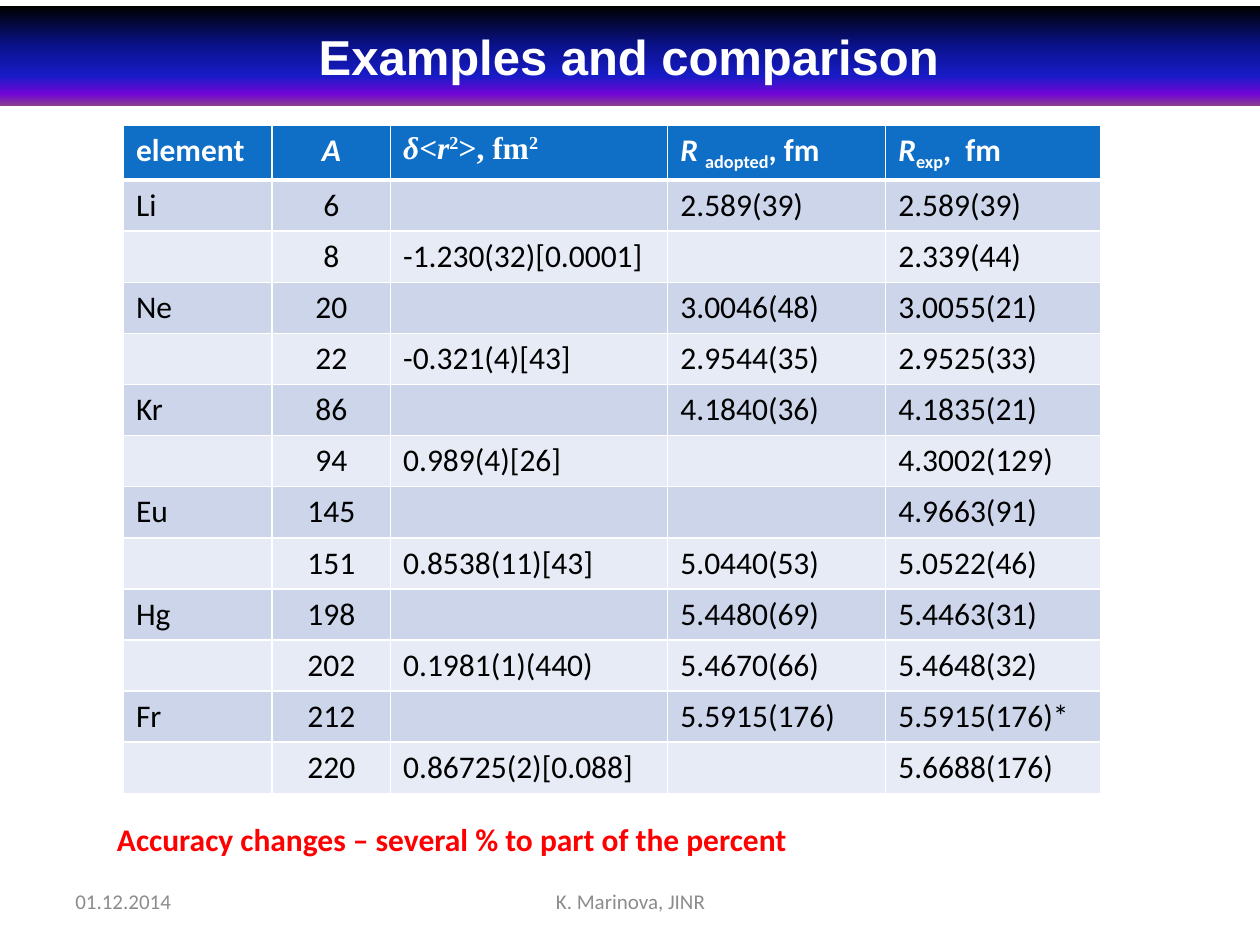
from dataclasses import dataclass

from lxml.etree import SubElement
from pptx import Presentation
from pptx.dml.color import RGBColor
from pptx.enum.text import MSO_ANCHOR as Anchor, PP_ALIGN as Align
from pptx.oxml.ns import qn
from pptx.util import Inches, Pt

WHITE = RGBColor(0xFF, 0xFF, 0xFF)
BLACK = RGBColor(0x00, 0x00, 0x00)
GREY = RGBColor(0x8C, 0x8C, 0x8C)
RED = RGBColor(0xFF, 0x00, 0x00)
HEADER_BLUE = RGBColor(0x0F, 0x6F, 0xC6)
BANDS = (RGBColor(0xCC, 0xD5, 0xEA), RGBColor(0xE7, 0xEB, 0xF5))
# Title gradient: percent and colour
TITLE_STOPS = (
    (0, BLACK),
    (40, RGBColor(0x0A, 0x12, 0x8C)),
    (70, RGBColor(0x18, 0x1C, 0xC7)),
    (88, RGBColor(0x70, 0x05, 0xD4)),
    (100, RGBColor(0x8C, 0x3D, 0x91)),
)
SERIF = "Times New Roman"


@dataclass
class Piece:
    text: str
    size: float = 18
    color: RGBColor = BLACK
    bold: bool = False
    italic: bool = False
    font: str = "Calibri"
    baseline: int = 0  # percent; negative for subscript


@dataclass
class Note:
    piece: Piece
    left: float
    top: float
    width: float
    align: Align = Align.LEFT
    wrap: bool = True


def head(text: str, **style) -> Piece:
    return Piece(text, color=WHITE, bold=True, **style)


HEADINGS = (
    (head("element"),),
    (head("A", italic=True),),
    (head("δ", italic=True, font=SERIF), head("<", font=SERIF),
     head("r", italic=True, font=SERIF), head("2", font=SERIF, baseline=30),
     head(">, fm", font=SERIF), head("2", font=SERIF, baseline=30)),
    (head("R ", italic=True), head("adopted", baseline=-25), head(", fm")),
    (head("R", italic=True), head("exp", baseline=-25), head(",  fm")),
)
NUCLEI = (
    ("Li", "6", "", "2.589(39)", "2.589(39)"),
    ("", "8", "-1.230(32)[0.0001]", "", "2.339(44)"),
    ("Ne", "20", "", "3.0046(48)", "3.0055(21)"),
    ("", "22", "-0.321(4)[43]", "2.9544(35)", "2.9525(33)"),
    ("Kr", "86", "", "4.1840(36)", "4.1835(21)"),
    ("", "94", "0.989(4)[26]", "", "4.3002(129)"),
    ("Eu", "145", "", "", "4.9663(91)"),
    ("", "151", "0.8538(11)[43]", "5.0440(53)", "5.0522(46)"),
    ("Hg", "198", "", "5.4480(69)", "5.4463(31)"),
    ("", "202", "0.1981(1)(440)", "5.4670(66)", "5.4648(32)"),
    ("Fr", "212", "", "5.5915(176)", "5.5915(176)*"),
    ("", "220", "0.86725(2)[0.088]", "", "5.6688(176)"),
)
COLUMN_WIDTHS = (1.18, 0.94, 2.2, 1.73, 1.71)
MASS_COLUMN = 1
NOTES = (
    Note(Piece("Accuracy changes – several % to part of the percent",
               color=RED, bold=True), 0.83, 6.46, 5.52, wrap=False),
    Note(Piece("01.12.2014", 12, GREY), 0.5, 6.95, 2.33),
    Note(Piece("K. Marinova, JINR", 12, GREY), 3.42, 6.95, 3.17, Align.CENTER),
)


def write(frame, pieces, align: Align = Align.LEFT) -> None:
    paragraph = frame.paragraphs[0]
    paragraph.alignment = align
    for piece in pieces:
        run = paragraph.add_run()
        run.text = piece.text
        run.font.size = Pt(piece.size)
        run.font.name = piece.font
        run.font.bold = piece.bold
        run.font.italic = piece.italic
        run.font.color.rgb = piece.color
        if piece.baseline:
            run.font._element.set("baseline", str(piece.baseline * 1000))


def add_stop(stops, position: int, color: RGBColor) -> None:
    stop = SubElement(stops, qn("a:gs"), pos=str(position * 1000))
    SubElement(stop, qn("a:srgbClr"), val=str(color))


def draw_title(slide) -> None:
    title = slide.shapes.title
    title.left, title.top = Inches(-0.02), Inches(0.05)
    title.width, title.height = Inches(10.02), Inches(0.79)
    title.fill.gradient()
    title.fill.gradient_angle = 270  # counter-clockwise, so top to bottom
    stops = next(title._element.spPr.iter(qn("a:gsLst")))
    for old_stop in list(stops):
        stops.remove(old_stop)
    for position, color in TITLE_STOPS:
        add_stop(stops, position, color)
    title.text_frame.vertical_anchor = Anchor.MIDDLE
    write(title.text_frame,
          [Piece("Examples and comparison", 28, WHITE, True, font="Arial")],
          Align.CENTER)


def format_cell(cell, fill: RGBColor, top: float, bottom: float) -> None:
    # Borders come before the fill in the cell properties
    properties = cell._tc.get_or_add_tcPr()
    for side, width in (("L", 1), ("R", 1), ("T", top), ("B", bottom)):
        line = SubElement(properties, qn(f"a:ln{side}"), w=str(Pt(width)))
        solid = SubElement(line, qn("a:solidFill"))
        SubElement(solid, qn("a:srgbClr"), val=str(WHITE))
    cell.fill.solid()
    cell.fill.fore_color.rgb = fill


def draw_table(slide) -> None:
    rows = [HEADINGS]
    for nucleus in NUCLEI:
        rows.append([[Piece(value)] if value else [] for value in nucleus])
    row_height = Inches(0.4)
    table = slide.shapes.add_table(
        len(rows), len(COLUMN_WIDTHS), Inches(0.98), Inches(0.99),
        Inches(sum(COLUMN_WIDTHS)), row_height * len(rows)).table
    for column, width in zip(table.columns, COLUMN_WIDTHS):
        column.width = Inches(width)
    for r, row in enumerate(rows):
        table.rows[r].height = row_height
        fill = BANDS[(r - 1) % 2] if r else HEADER_BLUE
        for c, pieces in enumerate(row):
            cell = table.cell(r, c)
            format_cell(cell, fill, 3 if r == 1 else 1, 3 if r == 0 else 1)
            write(cell.text_frame, pieces,
                  Align.CENTER if c == MASS_COLUMN else Align.LEFT)


def draw_note(slide, note: Note) -> None:
    frame = slide.shapes.add_textbox(
        Inches(note.left), Inches(note.top),
        Inches(note.width), Inches(0.4)).text_frame
    frame.word_wrap = note.wrap
    frame.vertical_anchor = Anchor.MIDDLE
    write(frame, [note.piece], note.align)


def main() -> None:
    deck = Presentation()
    deck.slide_width, deck.slide_height = Inches(10), Inches(7.5)
    slide = deck.slides.add_slide(deck.slide_layouts[5])
    draw_title(slide)
    draw_table(slide)
    for note in NOTES:
        draw_note(slide, note)
    deck.save("out.pptx")


if __name__ == "__main__":
    main()
